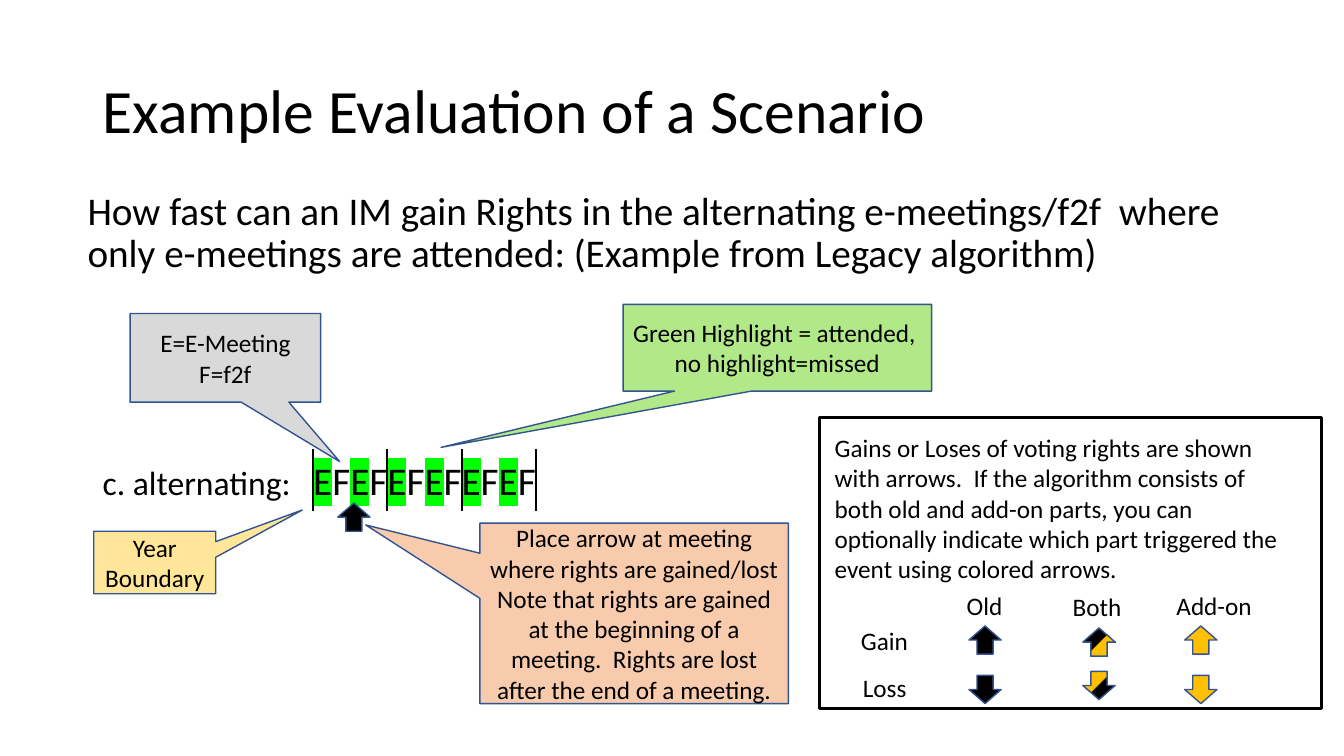
import pptx
import pptx.util
import pptx.dml.color
import pptx.enum.shapes
import pptx.enum.text
import pptx.oxml
import pptx.oxml.ns
from dataclasses import dataclass
from lxml import etree

SHAPES = pptx.enum.shapes.MSO_SHAPE
ALIGN = pptx.enum.text.PP_ALIGN
ANCHOR = pptx.enum.text.MSO_ANCHOR
AUTO_SIZE = pptx.enum.text.MSO_AUTO_SIZE
COLUMNS, ROWS = 133.3, 75


@dataclass(frozen=True)
class Theme:
    font: str = "Calibri"
    ink: str = "000000"
    outline: str = "325491"
    attended: str = "00FF00"
    green: str = "B1E888"
    orange: str = "F8CBAD"
    grey: str = "D9D9D9"
    yellow: str = "FFE699"
    gold: str = "FFC000"
    title: int = 44
    body: int = 28
    label: int = 24
    note: int = 18


def rgb(value):
    return pptx.dml.color.RGBColor.from_string(value)


class ScenarioSlide:
    def __init__(self, presentation, theme):
        self.theme = theme
        self.slide = presentation.slides.add_slide(presentation.slide_layouts[6])
        self.column = presentation.slide_width / COLUMNS
        self.row = presentation.slide_height / ROWS

    def place(self, left, top, width, height):
        return (round(left * self.column), round(top * self.row),
                round(width * self.column), round(height * self.row))

    def style(self, paragraph, size, align=ALIGN.LEFT):
        paragraph.alignment = align
        paragraph.font.name = self.theme.font
        paragraph.font.size = pptx.util.Pt(size)
        paragraph.font.color.rgb = rgb(self.theme.ink)

    def add_lines(self, frame, lines, size, align=ALIGN.LEFT):
        for index, line in enumerate(lines):
            paragraph = frame.add_paragraph() if index else frame.paragraphs[0]
            paragraph.add_run().text = line
            self.style(paragraph, size, align)

    def heading(self, box, text, size, anchor, space_before=0):
        frame = self.slide.shapes.add_textbox(*self.place(*box)).text_frame
        frame.word_wrap = True
        frame.vertical_anchor = anchor
        self.add_lines(frame, [text], size)
        frame.paragraphs[0].line_spacing = 0.9
        frame.paragraphs[0].space_before = pptx.util.Pt(space_before)

    def label(self, box, lines):
        frame = self.slide.shapes.add_textbox(*self.place(*box)).text_frame
        frame.word_wrap = False
        frame.auto_size = AUTO_SIZE.SHAPE_TO_FIT_TEXT
        self.add_lines(frame, lines, self.theme.note)

    def meetings(self, box, caption, sequence):
        frame = self.slide.shapes.add_textbox(*self.place(*box)).text_frame
        frame.word_wrap = False
        paragraph = frame.paragraphs[0]
        self.style(paragraph, self.theme.body)
        for text in (caption, "\t ", *sequence):
            run = paragraph.add_run()
            run.text = text
            run.font.size = pptx.util.Pt(self.theme.label if text == caption else self.theme.body)
            if text == "E":
                properties = run.font._element
                highlight = etree.SubElement(properties, pptx.oxml.ns.qn("a:highlight"))
                etree.SubElement(highlight, pptx.oxml.ns.qn("a:srgbClr"), val=self.theme.attended)

    def shape(self, kind, box, fill=None, line=None, weight=1.0):
        shape = self.slide.shapes.add_shape(kind, *self.place(*box))
        shape.shadow.inherit = False
        if fill:
            shape.fill.solid()
            shape.fill.fore_color.rgb = rgb(fill)
        else:
            shape.fill.background()
        shape.line.color.rgb = rgb(line or self.theme.outline)
        shape.line.width = pptx.util.Pt(weight)
        return shape

    def callout(self, box, tip, fill, lines):
        shape = self.shape(SHAPES.RECTANGULAR_CALLOUT, box, fill)
        shape.adjustments[0], shape.adjustments[1] = tip
        shape.text_frame.word_wrap = True
        shape.text_frame.vertical_anchor = ANCHOR.MIDDLE
        self.add_lines(shape.text_frame, lines, self.theme.note, ALIGN.CENTER)

    def arrow(self, left, top, fill, rotation=0):
        shape = self.shape(SHAPES.UP_ARROW, (left, top, 3.2, 2.8), fill)
        shape.rotation = rotation
        if fill is None:
            self.split_fill(shape)

    def split_fill(self, shape):
        black, gold = self.theme.ink, self.theme.gold
        stops = "".join(
            f'<a:gs pos="{share * 1000}"><a:srgbClr val="{color}"/></a:gs>'
            for share, color in ((0, black), (51, black), (54, gold), (100, gold)))
        gradient = pptx.oxml.parse_xml(
            f'<a:gradFill {pptx.oxml.ns.nsdecls("a")} rotWithShape="1"><a:gsLst>{stops}</a:gsLst>'
            '<a:lin ang="2700000" scaled="0"/></a:gradFill>')
        properties = shape._element.spPr
        properties.replace(properties.find(pptx.oxml.ns.qn("a:noFill")), gradient)

    def boundary(self, left, top, bottom):
        x, start, _, _ = self.place(left, top, 0, 0)
        line = self.slide.shapes.add_connector(
            pptx.enum.shapes.MSO_CONNECTOR.STRAIGHT, x, start, x, round(bottom * self.row))
        line.line.color.rgb = rgb(self.theme.ink)
        line.line.width = pptx.util.Pt(1.5)
        etree.SubElement(line._element.spPr, pptx.oxml.ns.qn("a:effectLst"))


def main():
    presentation = pptx.Presentation()
    presentation.slide_width = pptx.util.Inches(13.33)
    presentation.slide_height = pptx.util.Inches(7.5)
    theme = Theme()
    page = ScenarioSlide(presentation, theme)

    page.meetings((9.2, 44.8, 45.4, 8.8), "c. alternating:", "EF" * 6)
    page.heading((9.2, 4, 115, 14.5), "Example Evaluation of a Scenario", theme.title, ANCHOR.MIDDLE)
    page.heading(
        (7.7, 18.5, 115, 11.7),
        "How fast can an IM gain Rights in the alternating e-meetings/f2f  where "
        "only e-meetings are attended: (Example from Legacy algorithm)",
        theme.body, ANCHOR.TOP, 10)

    page.callout((61.8, 30.2, 30.6, 8.6), (-1.09, 1.15), theme.green,
                 ["Green Highlight = attended, ", "no highlight=missed"])
    page.arrow(33.5, 49.9, theme.ink)
    page.callout((47.6, 51.9, 30.6, 17.9), (-0.87, -0.49), theme.orange,
                 ["Place arrow at meeting where rights are gained/lost",
                  "Note that rights are gained at the beginning of a meeting.  "
                  "Rights are lost after the end of a meeting."])
    page.callout((12.9, 31.1, 18.9, 8.8), (0.6, 1.17), theme.grey, ["E=E-Meeting", "F=f2f"])
    for year in range(4):
        page.boundary(31 + 7.4 * year, 44.5, 50.7)
    page.callout((9.3, 52.7, 12.1, 6.2), (1.21, -0.84), theme.yellow, ["Year Boundary"])

    page.shape(SHAPES.RECTANGLE, (81.3, 41.4, 49.8, 28.9), line=theme.ink, weight=2.25)
    page.label((81.8, 42.4, 46.5, 16.2),
               ["Gains or Loses of voting rights are shown",
                "with arrows.  If the algorithm consists of",
                "both old and add-on parts, you can",
                "optionally indicate which part triggered the",
                "event using colored arrows."])
    for left, gain, loss, fill in ((96.1, 62.1, 67, theme.ink),
                                   (107.4, 62.3, 66.6, None),
                                   (117.5, 62.1, 67, theme.gold)):
        page.arrow(left, gain, fill)
        page.arrow(left, loss, fill, 180)
    for text, left, top, width in (("Old", 94.9, 58.1, 5.6), ("Both", 105.4, 58.2, 6.9),
                                   ("Add-on", 115.7, 58.1, 9.6), ("Gain", 84.4, 61.5, 6.7),
                                   ("Loss", 84.6, 66.2, 6.4)):
        page.label((left, top, width, 4), [text])

    presentation.save("out.pptx")


if __name__ == "__main__":
    main()
